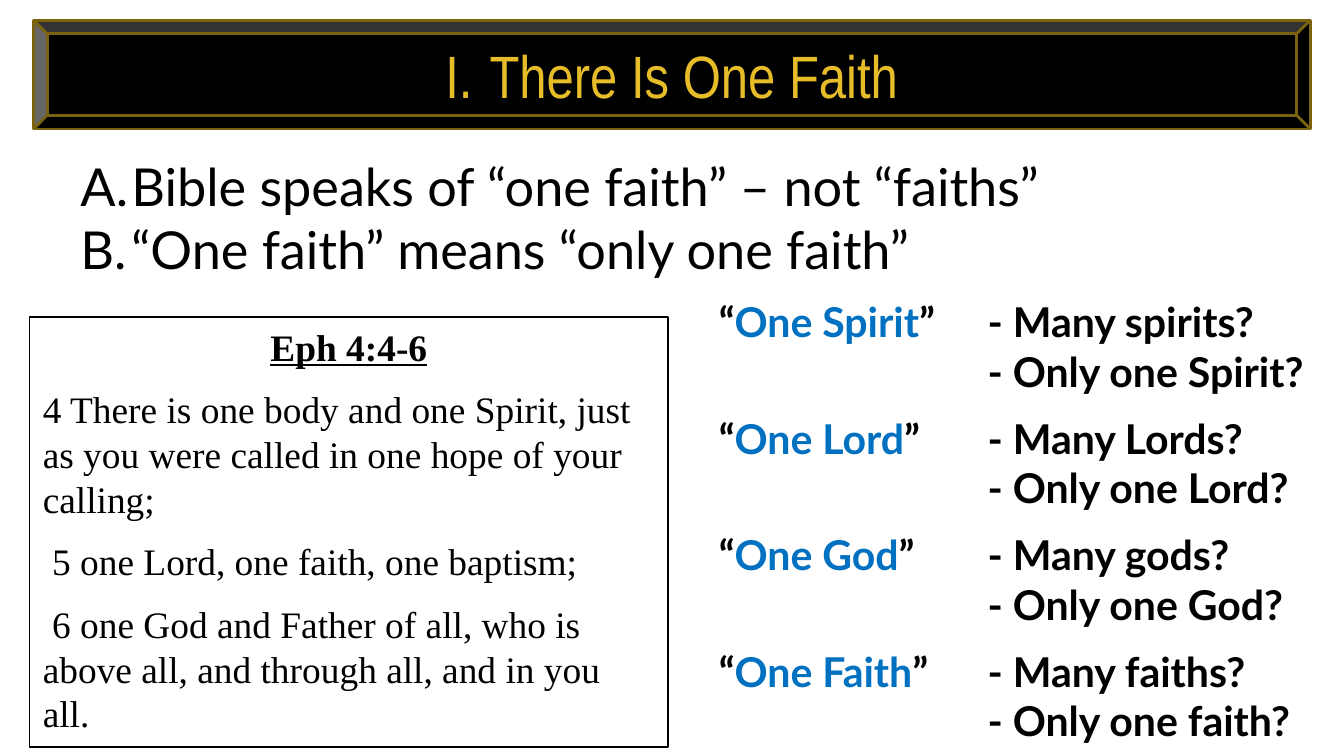
import pptx
import pptx.util
import pptx.dml.color
import pptx.enum.shapes
import pptx.enum.text
import pptx.oxml
from pptx.util import Inches

DRAWING = 'xmlns:a="http://schemas.openxmlformats.org/drawingml/2006/main"'
COLORS = {"black": "000000", "white": "FFFFFF", "blue": "0070C0",
          "gold": "E7BC29", "bronze": "7A620E"}
HEADING = {"name": "Arial Narrow", "size": pptx.util.Pt(32)}
POINT = {"name": "Lato", "size": pptx.util.Pt(28)}
QUESTION = {"name": "Lato", "size": pptx.util.Pt(22), "bold": True}
VERSE = {"name": "Times New Roman", "size": pptx.util.Pt(20)}
REFERENCE = {**VERSE, "bold": True, "underline": True}

POINTS = ["Bible speaks of “one faith” – not “faiths”",
          "“One faith” means “only one faith”"]
VERSES = ["4 There is one body and one Spirit, just as you were called in one hope of your calling;",
          " 5 one Lord, one faith, one baptism;",
          " 6 one God and Father of all, who is above all, and through all, and in you all."]
CONTRASTS = [("Spirit", "” \t", "spirits", "Spirit"), ("Lord", "”\t", "Lords", "Lord"),
             ("God", "”\t", "gods", "God"), ("Faith", "”\t", "faiths", "faith")]


def rgb(color):
    return pptx.dml.color.RGBColor.from_string(COLORS[color])


def add_text_area(slide, *box):
    frame = slide.shapes.add_textbox(*map(Inches, box)).text_frame
    frame.word_wrap = True
    return frame


def add_panel(slide, kind, box, fill, line, width, anchor):
    panel = slide.shapes.add_shape(kind, *map(Inches, box))
    panel.shadow.inherit = False
    panel.fill.solid()
    panel.fill.fore_color.rgb = rgb(fill)
    panel.line.color.rgb = rgb(line)
    panel.line.width = pptx.util.Pt(width)
    panel.text_frame.word_wrap = True
    panel.text_frame.vertical_anchor = anchor
    return panel.text_frame


def add_paragraph(frame, pieces, style, align="LEFT", gap=0):
    """Append a paragraph of (text, color) pieces, gap points below the last one."""
    first = frame.paragraphs[0]
    paragraph = frame.add_paragraph() if first.runs else first
    paragraph.alignment = getattr(pptx.enum.text.PP_ALIGN, align)
    paragraph.space_before = pptx.util.Pt(gap)
    for text, color in pieces:
        run = paragraph.add_run()
        run.text = text
        run.font.color.rgb = rgb(color)
        for attribute, value in style.items():
            setattr(run.font, attribute, value)
    return paragraph


def number(paragraph, scheme, indent):
    """Number a paragraph automatically with a hanging indent."""
    properties = paragraph._p.get_or_add_pPr()
    properties.set("marL", str(Inches(indent)))
    properties.set("indent", str(Inches(-indent)))
    for tag in ('buFont typeface="+mj-lt"', f'buAutoNum type="{scheme}"'):
        name, attribute = tag.split(" ")
        properties.append(pptx.oxml.parse_xml(f"<a:{name} {DRAWING} {attribute}/>"))


def set_tabs(paragraph, *stops):
    tabs = "".join(f'<a:tab pos="{Inches(stop)}" algn="l"/>' for stop in stops)
    paragraph._p.get_or_add_pPr().append(
        pptx.oxml.parse_xml(f"<a:tabLst {DRAWING}>{tabs}</a:tabLst>"))


def add_points(slide):
    frame = add_text_area(slide, 0.5, 1.1, 7.54, 1.04)
    for point in POINTS:
        number(add_paragraph(frame, [(point, "black")], POINT), "alphaUcPeriod", 0.38)


def add_scripture(slide):
    frame = add_panel(slide, pptx.enum.shapes.MSO_SHAPE.RECTANGLE,
                      (0.22, 2.36, 4.75, 3.2), "white", "black", 0.75,
                      pptx.enum.text.MSO_ANCHOR.TOP)
    add_paragraph(frame, [("Eph 4:4-6", "black")], REFERENCE, "CENTER")
    for verse in VERSES:
        add_paragraph(frame, [(verse, "black")], VERSE, gap=9.5)


def add_contrasts(slide):
    frame = add_text_area(slide, 5.25, 2.16, 5.19, 3.47)
    for index, (claim, closing, many, single) in enumerate(CONTRASTS):
        pieces = [("“", "black"), (f"One {claim}", "blue"),
                  (f"{closing}- Many {many}?", "black")]
        add_paragraph(frame, pieces, QUESTION, gap=9.6 if index else 0)
        add_paragraph(frame, [(f"\t\t- Only one {single}?", "black")], QUESTION)
    for paragraph in frame.paragraphs:
        set_tabs(paragraph, 1, 2)


def add_heading(slide):
    frame = add_panel(slide, pptx.enum.shapes.MSO_SHAPE.BEVEL,
                      (0.25, 0.15, 9.5, 0.81), "black", "bronze", 1.5,
                      pptx.enum.text.MSO_ANCHOR.MIDDLE)
    heading = add_paragraph(frame, [("There Is One Faith", "gold")], HEADING, "CENTER")
    number(heading, "romanUcPeriod", 0.33)


def main():
    deck = pptx.Presentation()
    deck.slide_width = Inches(10)
    deck.slide_height = deck.slide_width * 9 // 16
    slide = deck.slides.add_slide(deck.slide_layouts[6])
    add_points(slide)
    add_scripture(slide)
    add_contrasts(slide)
    add_heading(slide)
    deck.save("out.pptx")


if __name__ == "__main__":
    main()
